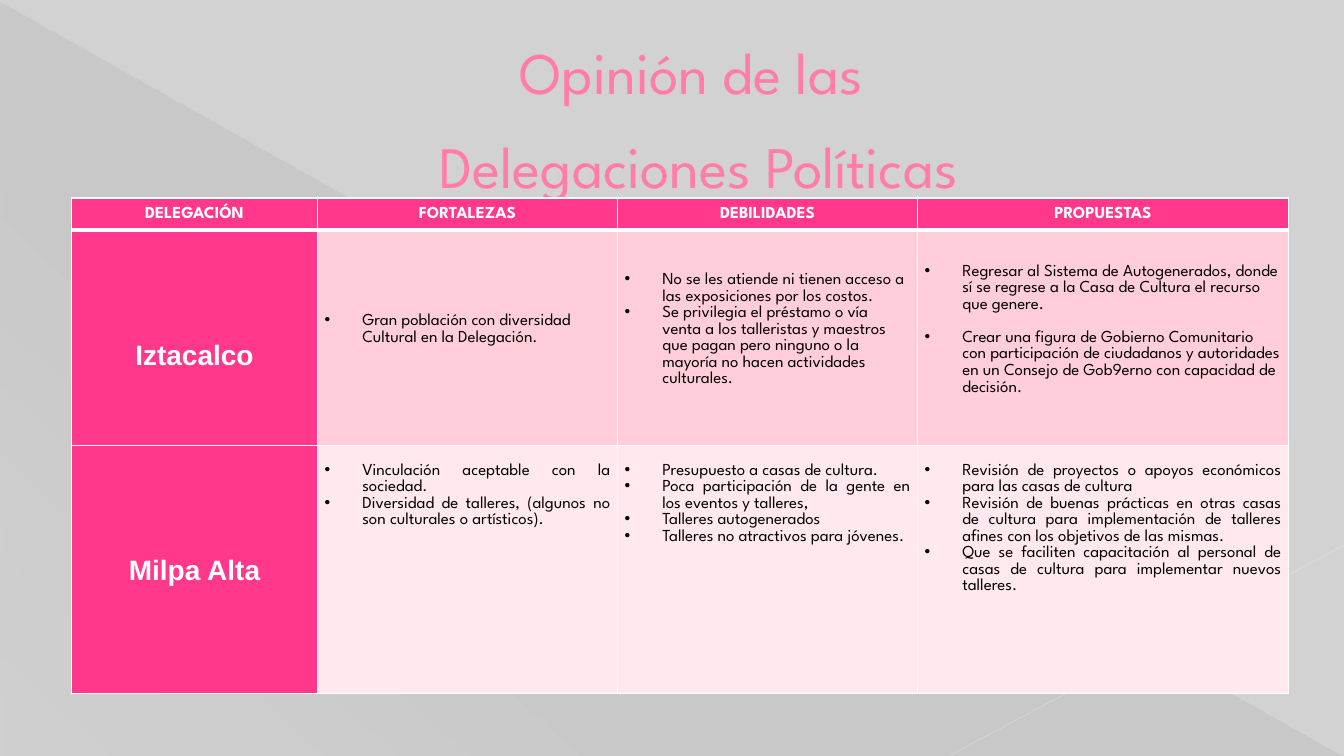
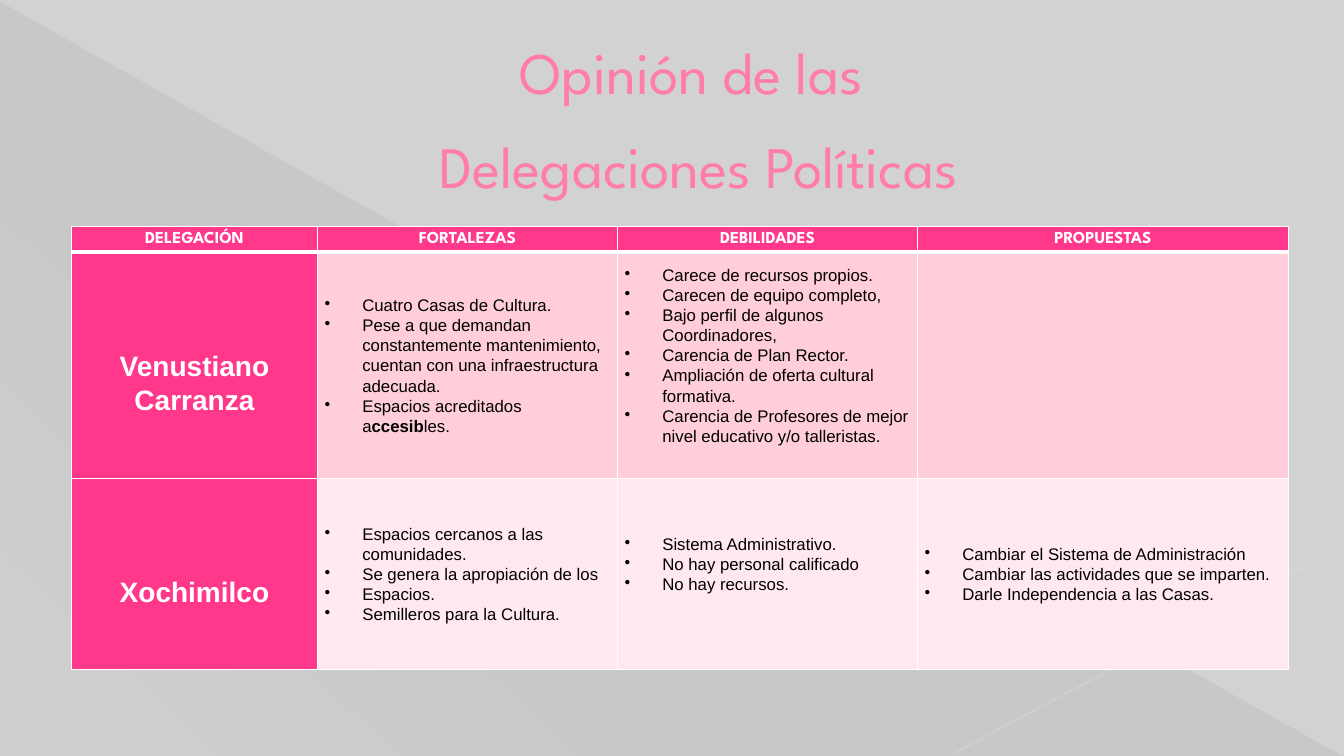
from lxml import etree
from pptx import Presentation
from pptx.dml.color import RGBColor
from pptx.enum.shapes import MSO_CONNECTOR, MSO_SHAPE
from pptx.enum.text import MSO_ANCHOR, PP_ALIGN
from pptx.oxml.ns import qn
from pptx.util import Pt

LEFT, MID, JUST = PP_ALIGN.LEFT, PP_ALIGN.CENTER, PP_ALIGN.JUSTIFY
TOP, CENTER = MSO_ANCHOR.TOP, MSO_ANCHOR.MIDDLE
WEDGE, LINE = MSO_SHAPE.RIGHT_TRIANGLE, MSO_CONNECTOR.STRAIGHT

SANS, ARIAL = "League Spartan", "Arial"
WHITE, BLACK, GRAY, SHADE = "FFFFFF", "000000", "D2D2D2", "666666"
PINK, ROSE = "FF388C", "FF7DA7"
TINTS = ["FFCEDA", "FFE8EE"]
COLS = [175.7, 214.3, 214.3, 265]
HEADS = ["DELEGACIÓN", "FORTALEZAS", "DEBILIDADES", "PROPUESTAS"]
TITLE = "Opinión de las \vDelegaciones Políticas"
LABEL_GAP, SANS_GAP, ARIAL_GAP = 24.6, 12, 14.4


def color(code):
    return RGBColor.from_string(code)


def child(node, tag, **attrs):
    return etree.SubElement(node, qn(tag), {k: str(v) for k, v in attrs.items()})


def tint(node, code, alpha=100):
    paint = child(node, "a:srgbClr", val=code)
    if alpha < 100:
        child(paint, "a:alpha", val=alpha * 1000)


def write(frame, lines, font=SANS, size=12, ink=BLACK, bold=False, align=LEFT,
          space=1.07, indent=0, bullet=False, gap=0):
    frame.word_wrap = True
    for n, line in enumerate(lines):
        para = frame.paragraphs[0] if n == 0 else frame.add_paragraph()
        para.alignment, para.line_spacing = align, space
        if n and gap:
            para.space_before = Pt(gap)
        props = para._p.get_or_add_pPr()
        if indent:
            props.set("marL", str(Pt(indent)))
        if bullet:
            props.set("indent", str(-Pt(indent)))
            child(props, "a:buChar", char="•")
        for k, part in enumerate(line.split("**")):
            for j, piece in enumerate(part.split("\v")):
                if j:
                    para.add_line_break()
                run = para.add_run()
                run.text = piece
                run.font.name, run.font.size = font, Pt(size)
                run.font.bold = bold or k % 2 == 1
                run.font.color.rgb = color(ink)


class Deck:
    def __init__(self):
        self.prs = Presentation()
        self.prs.slide_width, self.prs.slide_height = Pt(960), Pt(540)
        back = self.prs.slide_master.background.fill
        back.solid()
        back.fore_color.rgb = color(GRAY)
        self.slide = None

    def page(self):
        self.slide = self.prs.slides.add_slide(self.prs.slide_layouts[6])
        self.wedge(0.7, 1.4, 958.3, 538.6)
        self.line(0, 0.7, 959, 539.3, "E8E8E8", 0.39, 35)
        self.line(960, 389.5, 679, 539.3, "EAEAEA", 0.47, 45)
        self.title(TITLE)

    def wedge(self, x, y, w, h):
        shape = self.slide.shapes.add_shape(WEDGE, Pt(x), Pt(y), Pt(w), Pt(h))
        shape.shadow.inherit = False
        shape.line.fill.background()
        shape.fill.gradient()
        shape.fill.gradient_angle = 227
        stops = shape._element.spPr.find(qn("a:gradFill")).find(qn("a:gsLst"))
        for old in list(stops):
            stops.remove(old)
        for pos, alpha in [(0, 10), (70, 8), (100, 1)]:
            tint(child(stops, "a:gs", pos=pos * 1000), SHADE, alpha)

    def line(self, x, y, right, low, code, width, alpha):
        line = self.slide.shapes.add_connector(LINE, Pt(x), Pt(y), Pt(right), Pt(low))
        line.line.width = Pt(width)
        line.line.color.rgb = color(code)
        props = line._element.spPr
        paint = props.find(qn("a:ln")).find(qn("a:solidFill"))
        child(paint[0], "a:alpha", val=alpha * 1000)
        child(props, "a:effectLst")

    def title(self, text):
        box = self.slide.shapes.add_textbox(Pt(48), Pt(21), Pt(864), Pt(110))
        box.text_frame.vertical_anchor = CENTER
        write(box.text_frame, [text], size=42, ink=ROSE, align=MID, space=1.33, indent=38)

    def cell(self, cell, lines, fill, anchor=CENTER, above=0, below=0,
             roof=1, floor=1, **style):
        cell.margin_left = cell.margin_right = Pt(5)
        cell.margin_top, cell.margin_bottom = Pt(above), Pt(below)
        cell.vertical_anchor = anchor
        props = cell._tc.get_or_add_tcPr()
        for side, width in zip("LRTB", [1, 1, roof, floor]):
            edge = child(props, "a:ln" + side, w=Pt(width))
            tint(child(edge, "a:solidFill"), WHITE)
        cell.fill.solid()
        cell.fill.fore_color.rgb = color(fill)
        write(cell.text_frame, lines, **style)

    def table(self, y, highs, rows, font):
        frame = self.slide.shapes.add_table(
            len(highs), len(COLS), Pt(51.1), Pt(y), Pt(sum(COLS)), Pt(sum(highs)))
        table = frame.table
        table.horz_banding = False
        for col, width in zip(table.columns, COLS):
            col.width = Pt(width)
        for row, high in zip(table.rows, highs):
            row.height = Pt(high)
        for n, head in enumerate(HEADS):
            self.cell(table.cell(0, n), [head], PINK, floor=3,
                      ink=WHITE, bold=True, align=MID)
        for r, (name, lift, cells) in enumerate(rows, 1):
            roof = 3 if r == 1 else 1
            self.cell(table.cell(r, 0), [name], PINK, above=lift, roof=roof,
                      font=ARIAL, size=20, ink=WHITE, bold=True, align=MID)
            for c, (lines, style) in enumerate(cells, 1):
                self.cell(table.cell(r, c), lines, TINTS[r - 1], roof=roof,
                          font=font, indent=27, bullet=True, **style)


BASE = {"below": SANS_GAP}
HIGH = {"anchor": TOP, "above": SANS_GAP, "align": JUST}
RAISED = {"below": ARIAL_GAP}

FIRST = [
    ("Iztacalco", LABEL_GAP, [
        (["Gran población con diversidad Cultural en la Delegación."], BASE),
        (["No se les atiende ni tienen acceso a las exposiciones por los costos.",
          "Se privilegia el préstamo o vía venta a los talleristas y maestros que pagan "
          "pero ninguno o la mayoría no hacen actividades culturales."], BASE),
        (["Regresar al Sistema de Autogenerados, donde sí se regrese a la Casa de "
          "Cultura el recurso que genere.",
          "Crear una figura de Gobierno Comunitario con participación de ciudadanos y "
          "autoridades en un Consejo de Gob9erno con capacidad de decisión."],
         {**BASE, "gap": SANS_GAP}),
    ]),
    ("Milpa Alta", 0, [
        (["Vinculación aceptable con la sociedad.",
          "Diversidad de talleres, (algunos no son culturales o artísticos)."], HIGH),
        (["Presupuesto a casas de cultura.",
          "Poca participación de la gente en los eventos y talleres,",
          "Talleres autogenerados",
          "Talleres no atractivos para jóvenes."], HIGH),
        (["Revisión de proyectos o apoyos económicos para las casas de cultura",
          "Revisión de buenas prácticas en otras casas de cultura para implementación "
          "de talleres afines con los objetivos de las mismas.",
          "Que se faciliten capacitación al personal de casas de cultura para "
          "implementar nuevos talleres."], HIGH),
    ]),
]

SECOND = [
    ("Venustiano Carranza", LABEL_GAP, [
        (["Cuatro Casas de Cultura.",
          "Pese a que demandan constantemente mantenimiento, cuentan con una "
          "infraestructura adecuada.",
          "Espacios acreditados a**ccesib**les."], {}),
        (["Carece de recursos propios.",
          "Carecen de equipo completo,",
          "Bajo perfil de algunos Coordinadores,",
          "Carencia de Plan Rector.",
          "Ampliación de oferta cultural formativa.",
          "Carencia de Profesores de mejor nivel educativo y/o talleristas."], RAISED),
        ([], {}),
    ]),
    ("Xochimilco", LABEL_GAP, [
        (["Espacios cercanos a las comunidades.",
          "Se genera la apropiación de los",
          "Espacios.",
          "Semilleros para la Cultura."], {}),
        (["Sistema Administrativo.",
          "No hay personal calificado",
          "No hay recursos."], RAISED),
        (["Cambiar el Sistema de Administración",
          "Cambiar las actividades que se imparten.",
          "Darle Independencia a las Casas."], {}),
    ]),
]


def main():
    deck = Deck()
    deck.page()
    deck.table(141.4, [23, 154, 177], FIRST, SANS)
    deck.page()
    deck.table(162, [18, 162, 136], SECOND, ARIAL)
    deck.prs.save("out.pptx")


if __name__ == "__main__":
    main()
